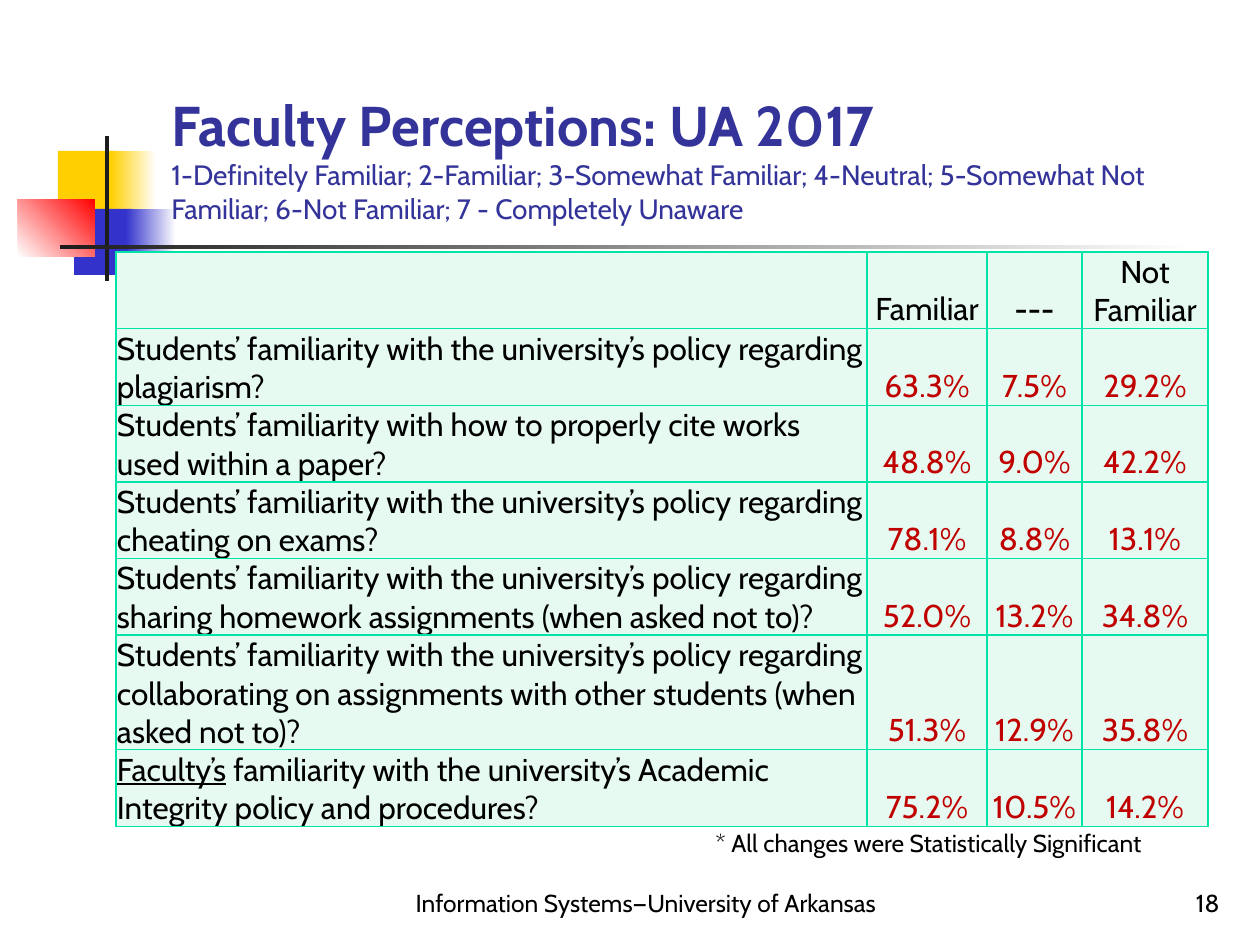
from lxml.etree import SubElement
from pptx import Presentation
from pptx.dml.color import RGBColor
from pptx.enum.shapes import MSO_SHAPE
from pptx.enum.text import MSO_ANCHOR, PP_ALIGN
from pptx.oxml.ns import qn
from pptx.util import Emu, Pt

FONT = "Cabin"
COLORS = {
    "yellow": "FFCF01", "blue": "3333CC", "red": "FF0000", "white": "FFFFFF",
    "bar": "1C1C1C", "title": "333399", "text": "000000", "value": "C00000",
    "cell": "E7FAF1", "border": "00E4A8",
}
HEADINGS = ["", "Familiar", "---", "Not Familiar"]
POLICY = "Students’ familiarity with the university’s policy regarding "
ANSWERS = [
    ([POLICY + "plagiarism?"], "63.3%", "7.5%", "29.2%"),
    (["Students’ familiarity with how to properly cite works used within a paper?"],
     "48.8%", "9.0%", "42.2%"),
    ([POLICY + "cheating on exams?"], "78.1%", "8.8%", "13.1%"),
    ([POLICY + "sharing homework assignments (when asked not to)?"],
     "52.0%", "13.2%", "34.8%"),
    ([POLICY + "collaborating on assignments with other students (when asked not to)?"],
     "51.3%", "12.9%", "35.8%"),
    (["Faculty’s", " familiarity with the university’s Academic Integrity policy and procedures?"],
     "75.2%", "10.5%", "14.2%"),
]


def px(length):
    """Turn px into EMU."""
    return Emu(round(length * 914400 / 126))


def rgb(name):
    """Look up a colour by name."""
    return RGBColor.from_string(COLORS[name])


def style(run, size, color, bold=False):
    """Set the font of a run."""
    run.font.name = FONT
    run.font.size = Pt(size)
    run.font.bold = bold
    run.font.color.rgb = rgb(color)


def add_block(slide, box, start, end=None, angle=0):
    """Add a rectangle, solid or fading from start to end."""
    block = slide.shapes.add_shape(MSO_SHAPE.RECTANGLE, *map(px, box))
    block.shadow.inherit = False
    block.line.fill.background()
    if end is None:
        block.fill.solid()
        block.fill.fore_color.rgb = rgb(start)
        return
    block.fill.gradient()
    block.fill.gradient_angle = angle
    for stop, name in zip(block.fill.gradient_stops, (start, end)):
        stop.color.rgb = rgb(name)


def add_ornament(slide, box):
    """Draw the coloured blocks and the crossing bars."""
    left, top, width, height = box
    blocks = [
        ((40, 15, 60, 66), "yellow"),
        ((93, 15, 45, 66), "yellow", "white"),
        ((56, 73, 58, 66), "blue"),
        ((108, 73, 50, 66), "blue", "white"),
        ((0, 63, 77, 58), "white", "red", 45),
        ((87, 0, 4, height), "bar"),
        ((42, 109, width - 42, 4), "bar", "white"),
    ]
    for (x, y, w, h), *paint in blocks:
        add_block(slide, (left + x, top + y, w, h), *paint)


def add_text(slide, box, text, align=PP_ALIGN.LEFT):
    """Add bottom-anchored text and return its runs."""
    frame = slide.shapes.add_textbox(*map(px, box)).text_frame
    frame.word_wrap = True
    frame.vertical_anchor = MSO_ANCHOR.BOTTOM
    frame.text = text
    frame.paragraphs[0].alignment = align
    for run in frame.paragraphs[0].runs:
        style(run, 14, "text")
    return frame.paragraphs[0].runs


def add_title(slide, box):
    """Add the title with the answer scale below it."""
    title, scale = add_text(
        slide, box,
        "Faculty Perceptions: UA 2017\v1-Definitely Familiar; 2-Familiar; "
        "3-Somewhat Familiar; 4-Neutral; 5-Somewhat Not Familiar; "
        "6-Not Familiar; 7 - Completely Unaware")
    style(title, 32, "title", bold=True)
    style(scale, 16, "title")


def add_footer(slide, box):
    """Add the footnote, the department and the slide number."""
    left, top, width, height = box
    add_text(slide, (left + 325, top, 536, 63),
             "* All changes were Statistically Significant")
    bottom = top + height - 63
    add_text(slide, (left, bottom, 536, 63),
             "Information Systems—University of Arkansas", PP_ALIGN.CENTER)
    add_text(slide, (left + width - 262, bottom, 262, 63), "18", PP_ALIGN.RIGHT)


def add_borders(cell):
    """Line all four sides of a cell."""
    properties = cell._tc.get_or_add_tcPr()
    for index, side in enumerate(("a:lnL", "a:lnR", "a:lnT", "a:lnB")):
        line = properties.makeelement(qn(side), {"w": str(Pt(1))})
        paint = SubElement(line, qn("a:solidFill"))
        SubElement(paint, qn("a:srgbClr"), val=COLORS["border"])
        properties.insert(index, line)


def fill_cell(cell, parts, align, color, bold=False):
    """Write the parts of a cell, underlining the first of several."""
    cell.fill.solid()
    cell.fill.fore_color.rgb = rgb("cell")
    add_borders(cell)
    cell.vertical_anchor = MSO_ANCHOR.BOTTOM
    cell.margin_left = cell.margin_right = cell.margin_top = px(1)
    cell.margin_bottom = 0
    paragraph = cell.text_frame.paragraphs[0]
    paragraph.alignment = align
    for index, part in enumerate(filter(None, parts)):
        run = paragraph.add_run()
        run.text = part
        style(run, 18, color, bold)
        if len(parts) > 1:
            run.font.underline = index == 0


def add_answers(slide, box):
    """Add the table of familiarity shares."""
    frame = slide.shapes.add_table(len(ANSWERS) + 1, len(HEADINGS), *map(px, box))
    table = frame.table
    table.first_row = table.horz_banding = False
    for column, width in zip(table.columns, (751, 120, 95, 126)):
        column.width = px(width)
    for row in table.rows:
        row.height = px(59)
    frame.height = px(box[3])
    for column, heading in enumerate(HEADINGS):
        fill_cell(table.cell(0, column), [heading], PP_ALIGN.CENTER, "text",
                  bold=heading == "---")
    for row, (question, *shares) in enumerate(ANSWERS, 1):
        fill_cell(table.cell(row, 0), question, PP_ALIGN.LEFT, "text")
        for column, share in enumerate(shares, 1):
            fill_cell(table.cell(row, column), [share], PP_ALIGN.CENTER, "value")


def main():
    """Build the slide and save it."""
    presentation = Presentation()
    presentation.slide_width, presentation.slide_height = px(1260), px(945)
    slide = presentation.slides.add_slide(presentation.slide_layouts[6])
    add_ornament(slide, (18, 136, 1176, 145))
    add_title(slide, (159, 29, 1074, 202))
    add_footer(slide, (378, 801, 854, 123))
    add_answers(slide, (116, 252, 1092, 612))
    presentation.save("out.pptx")


if __name__ == "__main__":
    main()
